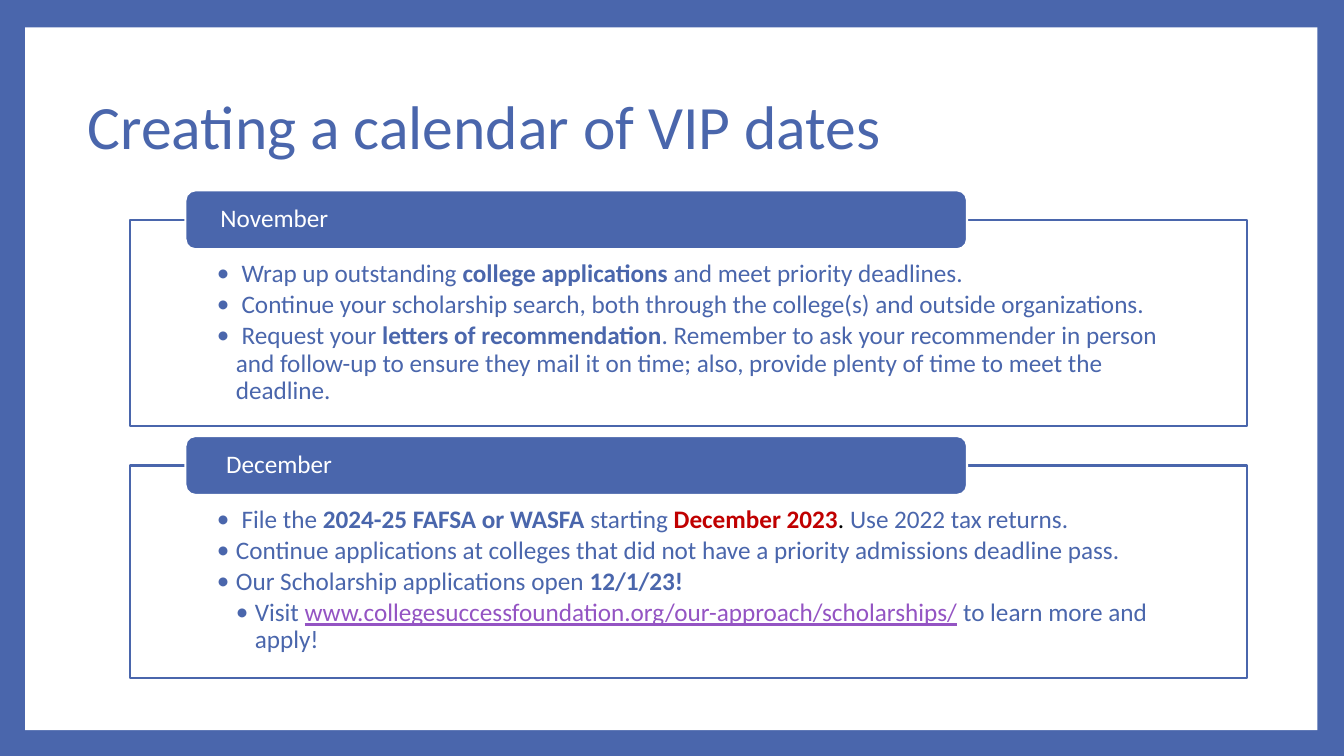
from lxml.etree import SubElement
from pptx import Presentation
from pptx.dml.color import RGBColor
from pptx.enum.shapes import MSO_SHAPE as Shape
from pptx.enum.text import MSO_ANCHOR as Anchor, MSO_AUTO_SIZE as AutoSize, PP_ALIGN as Align
from pptx.oxml.ns import qn
from pptx.util import Pt

BLUE = RGBColor(0x4A, 0x66, 0xAC)
WHITE = RGBColor(0xFF, 0xFF, 0xFF)
RED = RGBColor(0xC0, 0x00, 0x00)
BLACK = RGBColor(0x00, 0x00, 0x00)
PURPLE = RGBColor(0x94, 0x54, 0xC3)
FONT = "Calibri"
HANGING = 13.5
BOLD = {"bold": True}

NOVEMBER = [
    (0, [(" Wrap up outstanding ", {}), ("college applications", BOLD),
         (" and meet priority deadlines.", {})]),
    (0, [(" Continue your scholarship search, both through the college(s) and outside organizations.", {})]),
    (0, [(" Request your ", {}), ("letters of recommendation", BOLD),
         (". Remember to ask your recommender in person and follow-up to ensure they mail it on time; "
          "also, provide plenty of time to meet the deadline.", {})]),
]
DECEMBER = [
    (0, [(" File the ", {}), ("2024-25 FAFSA or WASFA", BOLD), (" starting ", {}),
         ("December 2023", {"bold": True, "color": RED}), (". ", {"color": BLACK}),
         ("Use 2022 tax returns.", {})]),
    (0, [("Continue applications at colleges that did not have a priority admissions deadline pass.", {})]),
    (0, [("Our Scholarship applications open ", {}), ("12/1/23!", BOLD)]),
    (1, [("Visit ", {}),
         ("www.collegesuccessfoundation.org/our-approach/scholarships/",
          {"color": PURPLE, "underline": True}),
         (" to learn more and apply!", {})]),
]


def place(item, left, top, width, height):
    """Move an item to a box given in points."""
    item.left, item.top, item.width, item.height = Pt(left), Pt(top), Pt(width), Pt(height)


def paint(item, fill, line=None):
    """Give an item a solid fill and an optional outline."""
    item.fill.solid()
    item.fill.fore_color.rgb = fill
    if line is None:
        item.line.fill.background()
    else:
        item.line.color.rgb = line
        item.line.width = Pt(1.5)


def style(run, size, color=BLUE, bold=False, underline=False):
    """Format one run of text."""
    font = run.font
    font.name, font.size, font.bold, font.underline = FONT, Pt(size), bold, underline
    font.color.rgb = color


def set_frame(frame, anchor, left, top, right, bottom):
    """Set the anchor and insets of a wrapped text frame."""
    frame.word_wrap, frame.auto_size, frame.vertical_anchor = True, AutoSize.NONE, anchor
    frame.margin_left, frame.margin_top = Pt(left), Pt(top)
    frame.margin_right, frame.margin_bottom = Pt(right), Pt(bottom)


def add_backdrop(slide, left, top, width, height):
    """Colour the slide and lay a white page behind its content."""
    slide.background.fill.solid()
    slide.background.fill.fore_color.rgb = BLUE
    page = slide.shapes.add_shape(Shape.RECTANGLE, Pt(left), Pt(top), Pt(width), Pt(height))
    page.shadow.inherit = False
    paint(page, WHITE)
    slide.shapes._spTree.insert(2, page._element)


def fill_title(title, text, *box):
    """Place and format the slide title."""
    place(title, *box)
    set_frame(title.text_frame, Anchor.MIDDLE, 7.2, 3.6, 7.2, 3.6)
    title.text_frame.text = text
    heading = title.text_frame.paragraphs[0]
    heading.alignment, heading.line_spacing = Align.LEFT, 0.9
    style(heading.runs[0], 44)


def fill_bullet(bullet, level, pieces):
    """Write one bulleted line made of differently styled pieces."""
    bullet.level = level
    properties = bullet._p.get_or_add_pPr()
    properties.set("marL", str(Pt(HANGING * (level + 1))))
    properties.set("indent", str(-Pt(HANGING)))
    SubElement(properties, qn("a:buFont"), typeface=FONT)
    SubElement(properties, qn("a:buChar"), char="•")
    bullet.alignment, bullet.line_spacing = Align.LEFT, 0.9
    bullet.space_before, bullet.space_after = Pt(0), Pt(2.7)
    for text, look in pieces:
        run = bullet.add_run()
        run.text = text
        style(run, 18, **look)


def add_month(slide, panel, month, tasks, left, top, width, height):
    """Fill an outlined panel with tasks and set the month tab on its top edge."""
    place(panel, left, top, width, height)
    paint(panel, WHITE, BLUE)
    frame = panel.text_frame
    set_frame(frame, Anchor.TOP, 62, 29.5, 62, 10)
    for number, (level, pieces) in enumerate(tasks):
        bullet = frame.add_paragraph() if number else frame.paragraphs[0]
        fill_bullet(bullet, level, pieces)

    tab = slide.shapes.add_shape(Shape.ROUNDED_RECTANGLE, Pt(left + 39.5), Pt(top - 21),
                                 Pt(width * 0.7), Pt(42))
    tab.shadow.inherit = False
    paint(tab, BLUE, WHITE)
    set_frame(tab.text_frame, Anchor.MIDDLE, 23, 0, 23, 0)
    tab.text_frame.text = month
    label = tab.text_frame.paragraphs[0]
    label.alignment, label.line_spacing = Align.LEFT, 0.9
    style(label.runs[0], 18, WHITE)


def main():
    """Build the calendar slide."""
    deck = Presentation()
    deck.slide_width, deck.slide_height = Pt(960), Pt(540)
    slide = deck.slides.add_slide(deck.slide_layouts.get_by_name("Two Content"))
    title, november, december = list(slide.placeholders)[:3]
    add_backdrop(slide, 18, 19.5, 923, 502)
    fill_title(title, "Creating a calendar of VIP dates", 55.5, 39.5, 777.5, 106.5)
    add_month(slide, november, "November", NOVEMBER, 93, 157, 797.5, 147.5)
    add_month(slide, december, " December", DECEMBER, 93, 332.5, 797.5, 152)
    deck.save("out.pptx")


if __name__ == "__main__":
    main()
